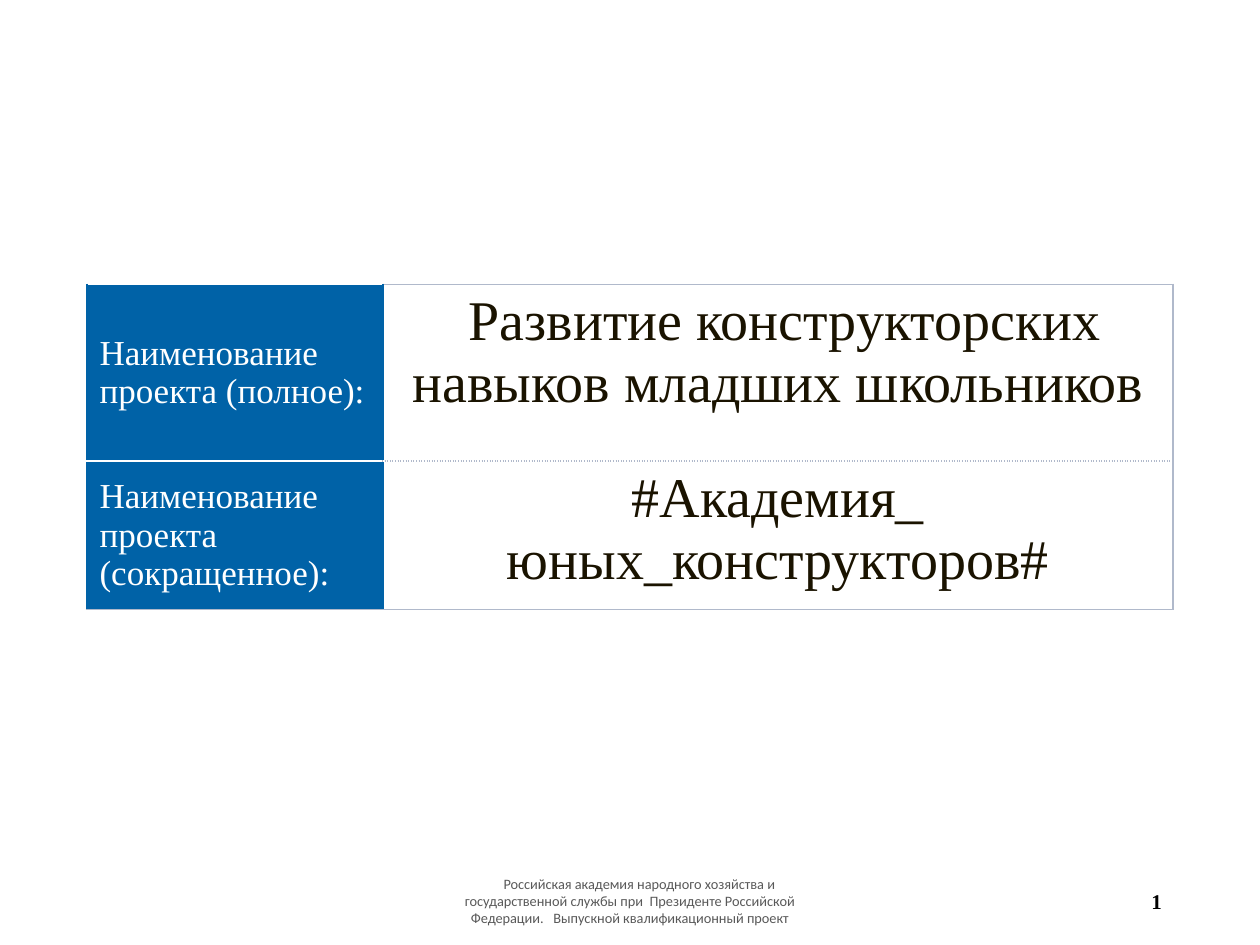
from dataclasses import dataclass

import pptx
import pptx.dml.color
import pptx.enum.text
import pptx.oxml
import pptx.oxml.ns
import pptx.util

Inches = pptx.util.Inches
ALIGN = pptx.enum.text.PP_ALIGN
ANCHOR = pptx.enum.text.MSO_ANCHOR

WIDTH, HEIGHT = Inches(10), Inches(7.5)
SERIF = "Times New Roman"
BLUE, WHITE, GREY = "0062A7", "FFFFFF", "B0B9CB"


@dataclass
class TextStyle:
    size: float
    color: str
    align: ALIGN
    font: str = SERIF
    bold: bool = False


@dataclass
class Border:
    color: str
    width: float
    dash: str = "solid"


@dataclass
class TableCell:
    row: int
    column: int
    text: str
    style: TextStyle
    anchor: ANCHOR
    fill: str
    borders: dict[str, Border]


def color(value: str) -> pptx.dml.color.RGBColor:
    return pptx.dml.color.RGBColor.from_string(value)


def write(frame, text: str, style: TextStyle) -> None:
    """Fill the first paragraph of a text frame."""
    paragraph = frame.paragraphs[0]
    paragraph.alignment = style.align
    run = paragraph.add_run()
    run.text = text
    font_format = {"name": style.font, "size": pptx.util.Pt(style.size), "bold": style.bold}
    for name, value in font_format.items():
        setattr(run.font, name, value)
    run.font.color.rgb = color(style.color)


def add_footer(slide, left: float, width: float, text: str, style: TextStyle):
    """Place a footer text; left and width are shares of the slide's width."""
    box = slide.shapes.add_textbox(
        int(WIDTH * left), int(HEIGHT * 0.927), int(WIDTH * width), int(HEIGHT * 0.053))
    frame = box.text_frame
    frame.word_wrap = True
    frame.vertical_anchor = ANCHOR.MIDDLE
    write(frame, text, style)
    return frame


def add_border(cell, side: str, border: Border) -> None:
    cell._tc.get_or_add_tcPr().append(pptx.oxml.parse_xml(
        f'<a:ln{side} {pptx.oxml.ns.nsdecls("a")} w="{pptx.util.Pt(border.width)}">'
        f'<a:solidFill><a:srgbClr val="{border.color}"/></a:solidFill>'
        f'<a:prstDash val="{border.dash}"/></a:ln{side}>'))


def draw_cell(table, item: TableCell) -> None:
    cell = table.cell(item.row, item.column)
    write(cell.text_frame, item.text, item.style)
    cell.vertical_anchor = item.anchor
    for side in "LRTB":  # the order the schema asks for
        if side in item.borders:
            add_border(cell, side, item.borders[side])
    cell.fill.solid()
    cell.fill.fore_color.rgb = color(item.fill)


LABEL = TextStyle(20, WHITE, ALIGN.LEFT)
NAME = TextStyle(32, "1A1300", ALIGN.CENTER)
FOOTER = TextStyle(8.2, "595959", ALIGN.CENTER, "Calibri")
NUMBER = TextStyle(12, "000000", ALIGN.RIGHT, bold=True)

SIDE, GAP = Border(BLUE, 1.5), Border(WHITE, 1.5)
EDGE, DOTS = Border(GREY, 1), Border(GREY, 1.5, "sysDot")

COLUMNS, ROWS = (2.35, 6.27), (1.4, 1.18)
PROJECT_NAMES = [
    ("Наименование проекта (полное):",
     " Развитие конструкторских навыков младших школьников"),
    ("Наименование проекта (сокращенное):",
     "#Академия_ юных_конструкторов#"),
]
# Top and bottom borders of each row: label column, then name column
ROW_BORDERS = [
    ({"B": GAP}, {"T": EDGE, "B": DOTS}),
    ({"T": GAP, "B": EDGE}, {"T": DOTS, "B": EDGE}),
]


def main() -> None:
    presentation = pptx.Presentation()
    presentation.slide_width, presentation.slide_height = WIDTH, HEIGHT
    slide = presentation.slides.add_slide(presentation.slide_layouts[6])

    # Footer and page number
    footer = add_footer(
        slide, 0.331, 0.338,
        "Российская академия народного хозяйства и государственной службы при  "
        "Президенте Российской Федерации.   Выпускной квалификационный проект", FOOTER)
    footer.margin_left = footer.margin_right = Inches(0.25)
    footer.paragraphs[0]._p.get_or_add_pPr().set("indent", str(Inches(0.15)))
    add_footer(slide, 0.707, 0.225, "1", NUMBER)

    # Project names
    table = slide.shapes.add_table(
        len(ROWS), len(COLUMNS), int(WIDTH * 0.069), int(HEIGHT * 0.301),
        Inches(sum(COLUMNS)), Inches(sum(ROWS))).table
    table.first_row = table.horz_banding = False
    for column, width in zip(table.columns, COLUMNS):
        column.width = Inches(width)
    for row, height in zip(table.rows, ROWS):
        row.height = Inches(height)

    for row, (label, name) in enumerate(PROJECT_NAMES):
        label_borders, name_borders = ROW_BORDERS[row]
        draw_cell(table, TableCell(row, 0, label, LABEL, ANCHOR.MIDDLE, BLUE,
                                   {"L": SIDE, "R": SIDE, **label_borders}))
        draw_cell(table, TableCell(row, 1, name, NAME, ANCHOR.TOP, WHITE,
                                   {"L": SIDE, "R": EDGE, **name_borders}))

    presentation.save("out.pptx")


if __name__ == "__main__":
    main()
